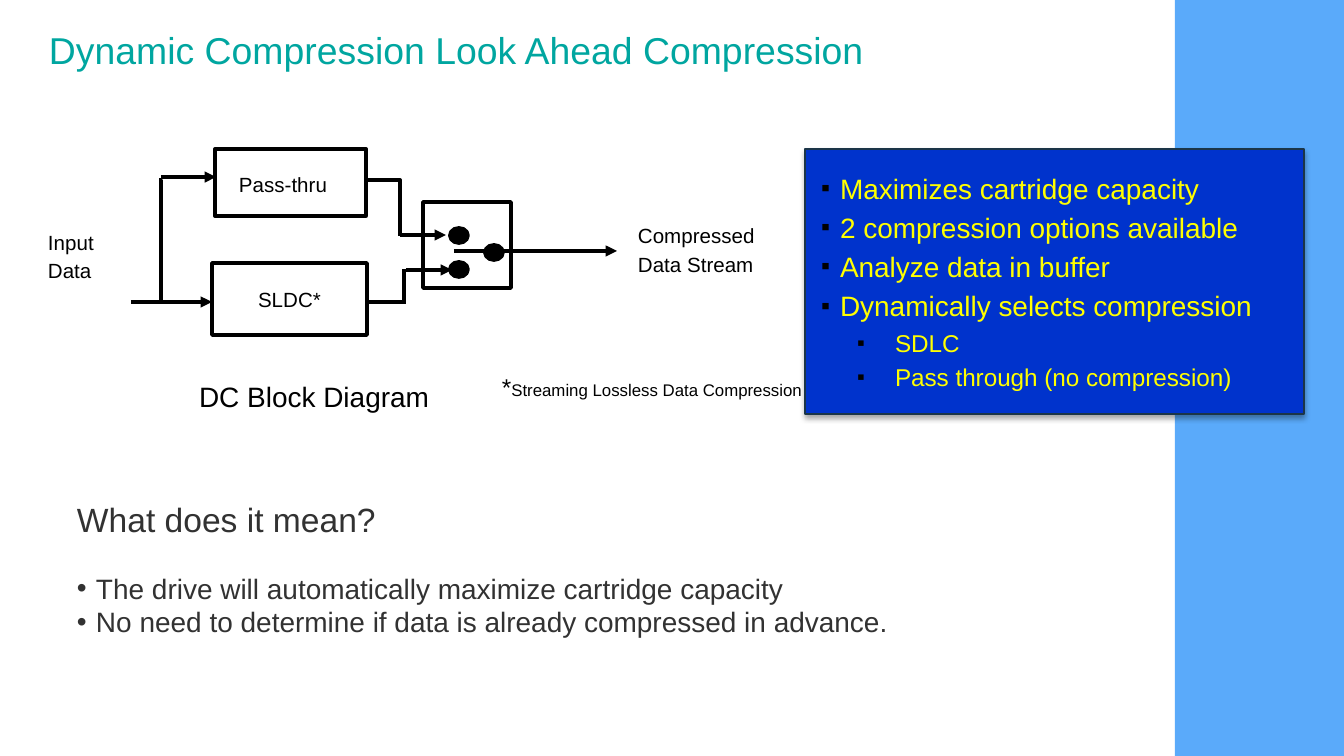
from typing import NamedTuple, Optional

from lxml import etree
from pptx import Presentation
from pptx.dml.color import RGBColor
from pptx.enum.shapes import MSO_CONNECTOR, MSO_SHAPE
from pptx.enum.text import MSO_ANCHOR, MSO_AUTO_SIZE, PP_ALIGN
from pptx.oxml.ns import qn
from pptx.util import Emu, Pt

EMU_PER_PX = 914400 / 134.4
STRAIGHT = MSO_CONNECTOR.STRAIGHT
RECTANGLE, OVAL = MSO_SHAPE.RECTANGLE, MSO_SHAPE.OVAL
TOP, MIDDLE = MSO_ANCHOR.TOP, MSO_ANCHOR.MIDDLE
LEFT, CENTER = PP_ALIGN.LEFT, PP_ALIGN.CENTER

BLACK = RGBColor(0x00, 0x00, 0x00)
WHITE = RGBColor(0xFF, 0xFF, 0xFF)
TEAL = RGBColor(0x00, 0xA6, 0xA0)
SKY = RGBColor(0x5A, 0xAA, 0xFA)
ROYAL = RGBColor(0x00, 0x33, 0xCC)
NAVY = RGBColor(0x1B, 0x35, 0x48)
YELLOW = RGBColor(0xFF, 0xFF, 0x00)
CHARCOAL = RGBColor(0x32, 0x32, 0x32)
FONT = "Arial"


class Box(NamedTuple):
    left: int
    top: int
    width: int
    height: int


class Wire(NamedTuple):
    start: tuple[int, int]
    end: tuple[int, int]
    arrow: bool = False


class Label(NamedTuple):
    box: Box
    lines: tuple[str, ...]
    size: int
    space_after: int
    prefix: str = ""


SWITCH_DOT_CORNERS = ((450, 228), (450, 262), (485, 245))
STAGES = (Box(215, 149, 151, 67), Box(212, 263, 155, 72), Box(423, 202, 88, 86))
WIRES = (
    Wire((131, 302), (212, 302), True),
    Wire((161, 177), (216, 177), True),
    Wire((400, 180), (400, 236)),
    Wire((400, 235), (446, 235), True),
    Wire((366, 302), (406, 302)),
    Wire((404, 303), (404, 269)),
    Wire((406, 270), (452, 270), True),
    Wire((454, 251), (617, 251), True),
)
BENDS = (
    ((161, 304), (161, 180), (159, 180)),
    ((368, 180), (400, 180), (400, 184)),
)
LABELS = (
    Label(Box(239, 171, 91, 26), ("Pass-thru",), 11, 2),
    Label(Box(48, 229, 46, 54), ("Input", "Data"), 11, 2),
    Label(Box(638, 223, 117, 54), ("Compressed", "Data Stream"), 11, 2),
    Label(Box(199, 379, 235, 35), ("DC Block Diagram",), 15, 3),
    Label(Box(502, 372, 303, 30), ("Streaming Lossless Data Compression",), 9, 2, "*"),
)
BENEFITS = ("Maximizes cartridge capacity", "2 compression options available",
            "Analyze data in buffer", "Dynamically selects compression")
OPTIONS = ("SDLC", "Pass through (no compression)")
MEANINGS = ("The drive will automatically maximize cartridge capacity",
            "No need to determine if data is already compressed in advance.")


def px(length: float) -> Emu:
    return Emu(round(length * EMU_PER_PX))


def place(shape, box: Box) -> None:
    shape.left, shape.top, shape.width, shape.height = map(px, box)


def set_frame(shape, *, insets=(0, 0, 0, 0), anchor=TOP, wrap=True):
    frame = shape.text_frame
    frame.auto_size = MSO_AUTO_SIZE.NONE
    frame.word_wrap = wrap
    frame.vertical_anchor = anchor
    (frame.margin_left, frame.margin_top,
     frame.margin_right, frame.margin_bottom) = map(px, insets)
    return frame


def write(frame, text: str, *, size: int, color: RGBColor, align=LEFT,
          prefix: str = "", prefix_size: int = 13, space_before: int = 0,
          space_after: int = 0, line_spacing: float = 1.0, level: int = 0,
          bullet: str = "", bullet_color: Optional[RGBColor] = None,
          bullet_size: int = 100, margin: int = 0, hanging: int = 0) -> None:
    """Fill the first paragraph if it is unused, otherwise add one."""
    paragraph = frame.paragraphs[0]
    if paragraph.runs:
        paragraph = frame.add_paragraph()
    paragraph.alignment = align
    paragraph.level = level
    paragraph.line_spacing = line_spacing
    paragraph.space_before = Pt(space_before)
    paragraph.space_after = Pt(space_after)
    properties = paragraph._p.get_or_add_pPr()
    properties.set("marL", str(px(margin)))
    properties.set("indent", str(px(-hanging)))
    if bullet:
        tint = etree.SubElement(properties, qn("a:buClr"))
        etree.SubElement(tint, qn("a:srgbClr"), val=str(bullet_color or color))
        etree.SubElement(properties, qn("a:buSzPct"), val=str(bullet_size * 1000))
        etree.SubElement(properties, qn("a:buFont"), typeface=FONT)
        etree.SubElement(properties, qn("a:buChar"), char=bullet)
    else:
        etree.SubElement(properties, qn("a:buNone"))
    for part, part_size in ((prefix, prefix_size), (text, size)):
        if part:
            run = paragraph.add_run()
            run.text = part
            run.font.name = FONT
            run.font.size = Pt(part_size)
            run.font.color.rgb = color


def add_block(shapes, preset, box: Box, fill: RGBColor,
              outline: Optional[RGBColor] = BLACK, weight: float = 2):
    block = shapes.add_shape(preset, *map(px, box))
    block.shadow.inherit = False
    block.fill.solid()
    block.fill.fore_color.rgb = fill
    if outline is None:
        block.line.fill.background()
    else:
        block.line.color.rgb = outline
        block.line.width = Pt(weight)
    return block


def add_wire(shapes, wire: Wire) -> None:
    connector = shapes.add_connector(STRAIGHT, *map(px, wire.start + wire.end))
    connector.line.color.rgb = BLACK
    connector.line.width = Pt(2)
    if wire.arrow:
        etree.SubElement(connector.line._get_or_add_ln(), qn("a:tailEnd"), type="triangle")
    etree.SubElement(connector._element.spPr, qn("a:effectLst"))


def add_bend(shapes, points: tuple[tuple[int, int], ...]) -> None:
    builder = shapes.build_freeform(*points[0], scale=EMU_PER_PX)
    builder.add_line_segments(points[1:], close=False)
    bend = builder.convert_to_shape()
    bend.shadow.inherit = False
    bend.fill.background()
    bend.line.color.rgb = BLACK
    bend.line.width = Pt(2)


def add_label(shapes, label: Label) -> None:
    frame = set_frame(shapes.add_textbox(*map(px, label.box)), anchor=MIDDLE, wrap=False)
    for line in label.lines:
        write(frame, line, size=label.size, color=BLACK, prefix=label.prefix,
              space_after=label.space_after)


def add_drop_shadow(shape) -> None:
    effects = shape._element.spPr.find(qn("a:effectLst"))
    shadow = etree.SubElement(effects, qn("a:outerShdw"), blurRad=str(Pt(3.1)),
                              dist=str(Pt(1.8)), dir="5400000", rotWithShape="0")
    tint = etree.SubElement(shadow, qn("a:srgbClr"), val=str(BLACK))
    etree.SubElement(tint, qn("a:alpha"), val="35000")


def send_to_back(shape) -> None:
    shape._element.getparent().insert(2, shape._element)


def main() -> None:
    deck = Presentation()
    deck.slide_width, deck.slide_height = px(1344), px(756)
    slide = deck.slides.add_slide(deck.slide_layouts[3])
    shapes = slide.shapes
    title, benefits, meaning = slide.placeholders

    panel = add_block(shapes, RECTANGLE, Box(805, 149, 499, 265), ROYAL, NAVY, 0.75)
    add_drop_shadow(panel)
    send_to_back(panel)
    send_to_back(add_block(shapes, RECTANGLE, Box(1175, 0, 169, 756), SKY, None))

    place(title, Box(39, 32, 892, 79))
    write(set_frame(title, insets=(10, 0, 0, 0)),
          "Dynamic Compression Look Ahead Compression",
          size=20, color=TEAL, line_spacing=0.9)

    place(benefits, Box(821, 171, 468, 224))
    frame = set_frame(benefits)
    square = dict(color=YELLOW, space_after=3, bullet="▪", bullet_color=BLACK, bullet_size=91)
    for benefit in BENEFITS:
        write(frame, benefit, size=15, margin=19, hanging=19, **square)
    for option in OPTIONS:
        write(frame, option, size=13, level=1, margin=74, hanging=38, **square)

    place(meaning, Box(71, 496, 833, 180))
    frame = set_frame(meaning, insets=(6, 3, 6, 3))
    write(frame, "What does it mean?", size=18, color=CHARCOAL)
    for index, sentence in enumerate(MEANINGS):
        write(frame, sentence, size=15, color=CHARCOAL, bullet="•", margin=19,
              hanging=19, space_before=0 if index else 17)

    _, sldc, _ = [add_block(shapes, RECTANGLE, box, WHITE) for box in STAGES]
    write(set_frame(sldc, anchor=MIDDLE), "SLDC*", size=11, color=BLACK,
          align=CENTER, space_after=2)
    for wire in WIRES:
        add_wire(shapes, wire)
    for bend in BENDS:
        add_bend(shapes, bend)
    for left, top in SWITCH_DOT_CORNERS:
        add_block(shapes, OVAL, Box(left, top, 18, 15), BLACK)
    for label in LABELS:
        add_label(shapes, label)

    deck.save("out.pptx")


if __name__ == "__main__":
    main()
